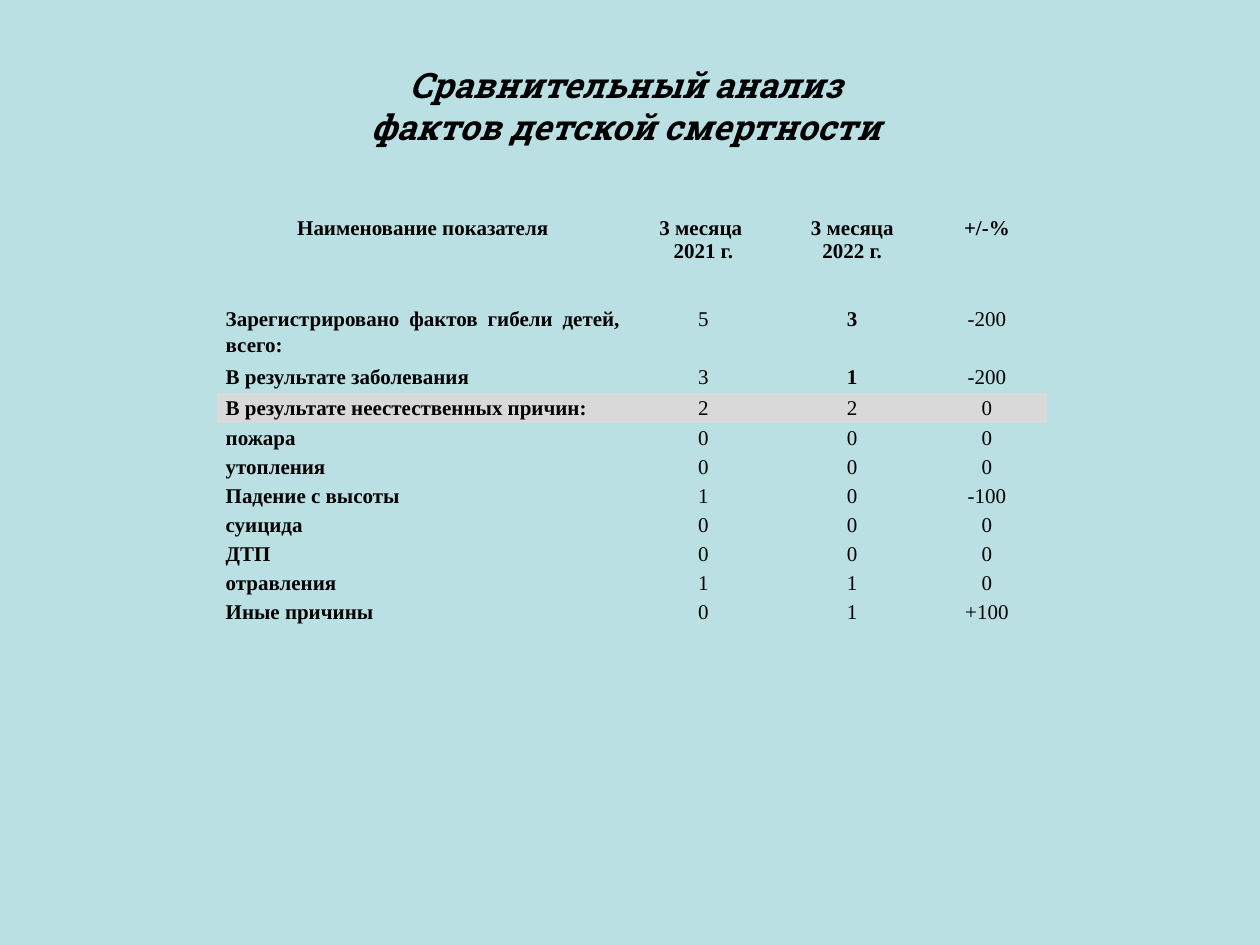
from pptx import Presentation
from pptx.dml.color import RGBColor
from pptx.enum.text import MSO_ANCHOR, PP_ALIGN
from pptx.oxml.ns import qn
from pptx.util import Cm, Pt

CENTER, JUSTIFY = PP_ALIGN.CENTER, PP_ALIGN.JUSTIFY
MIDDLE = MSO_ANCHOR.MIDDLE

BACKGROUND = RGBColor(0xBB, 0xE0, 0xE3)
HIGHLIGHT = RGBColor(0xD9, 0xD9, 0xD9)
BLACK = RGBColor(0, 0, 0)
NO_STYLE_NO_GRID = "{2D5ABB26-0587-4C30-8999-92F81FD0307C}"

TITLE = "Сравнительный анализ \vфактов детской смертности "
HEADER = ("Наименование показателя", "3 месяца \n2021 г.", "3 месяца\n2022 г.", "+/-%")
INDICATORS = [
    ("Зарегистрировано фактов гибели детей, всего:", "5", "3", "-200"),
    ("В результате заболевания", "3", "1", "-200"),
    ("В результате неестественных причин:", "2", "2", "0"),
    ("пожара", "0", "0", "0"),
    ("утопления", "0", "0", "0"),
    ("Падение с высоты", "1", "0", "-100"),
    ("суицида", "0", "0", "0"),
    ("ДТП", "0", "0", "0"),
    ("отравления", "1", "1", "0"),
    ("Иные причины", "0", "1", "+100"),
]
TOTAL_ROW, HIGHLIGHT_ROW = 1, 3
BOLD_VALUES = {(1, 2), (2, 2)}

COLUMN_WIDTHS = (8.31, 3, 3, 2.43)
ROW_HEIGHTS = [0.74, 1, 0.63, 0.61, 0.48] + [0.58] * 6
TOTAL_TOP_MARGIN = 0.74

TITLE_FONT = {"name": "Roboto Slab", "size": Pt(20), "bold": True, "italic": True}
TABLE_FONT = {"name": "Times New Roman", "size": Pt(12)}
CELL_MARGINS = {"margin_left": Cm(0.18), "margin_right": Cm(0.18),
                "margin_top": 0, "margin_bottom": 0}
BODY_SPACING = {"line_spacing": 1.15, "space_after": Pt(10)}


def set_attributes(target, values):
    for name, value in values.items():
        setattr(target, name, value)


def format_paragraph(paragraph, font, layout):
    set_attributes(paragraph, layout)
    for run in paragraph.runs:
        set_attributes(run.font, font)
        run.font.color.rgb = BLACK


def add_title(slide):
    frame = slide.shapes.add_textbox(Cm(1.27), Cm(1.03), Cm(22.86), Cm(2.21)).text_frame
    set_attributes(frame, {"word_wrap": True, "vertical_anchor": MIDDLE})
    heading = frame.paragraphs[0]
    heading.text = TITLE
    format_paragraph(heading, TITLE_FONT, {"alignment": CENTER})


def fill_cell(cell, row, column, text):
    set_attributes(cell, CELL_MARGINS)
    if row == TOTAL_ROW:
        cell.margin_top = Cm(TOTAL_TOP_MARGIN)
    if row == HIGHLIGHT_ROW:
        cell.fill.solid()
        cell.fill.fore_color.rgb = HIGHLIGHT
    else:
        cell.fill.background()

    is_header = row == 0
    is_label = column == 0
    bold = is_header or is_label or (row, column) in BOLD_VALUES
    alignment = JUSTIFY if is_label and not is_header else CENTER
    spacing = {} if is_header else BODY_SPACING
    cell.text = text
    for paragraph in cell.text_frame.paragraphs:
        format_paragraph(paragraph, {**TABLE_FONT, "bold": bold},
                         {"alignment": alignment, **spacing})


def add_indicator_table(slide):
    rows = [HEADER] + INDICATORS
    table = slide.shapes.add_table(
        len(rows), len(HEADER), Cm(4.37), Cm(4.37),
        Cm(sum(COLUMN_WIDTHS)), Cm(sum(ROW_HEIGHTS))).table
    set_attributes(table, {"first_row": False, "horz_banding": False})
    table._tbl.tblPr.find(qn("a:tableStyleId")).text = NO_STYLE_NO_GRID
    for column, width in zip(table.columns, COLUMN_WIDTHS):
        column.width = Cm(width)
    for row, height in zip(table.rows, ROW_HEIGHTS):
        row.height = Cm(height)
    for row, texts in enumerate(rows):
        for column, text in enumerate(texts):
            fill_cell(table.cell(row, column), row, column, text)


def main():
    deck = Presentation()
    set_attributes(deck, {"slide_width": Cm(25.4), "slide_height": Cm(19.05)})
    slide = deck.slides.add_slide(deck.slide_layouts[6])
    slide.background.fill.solid()
    slide.background.fill.fore_color.rgb = BACKGROUND
    add_title(slide)
    add_indicator_table(slide)
    deck.save("out.pptx")


if __name__ == "__main__":
    main()
